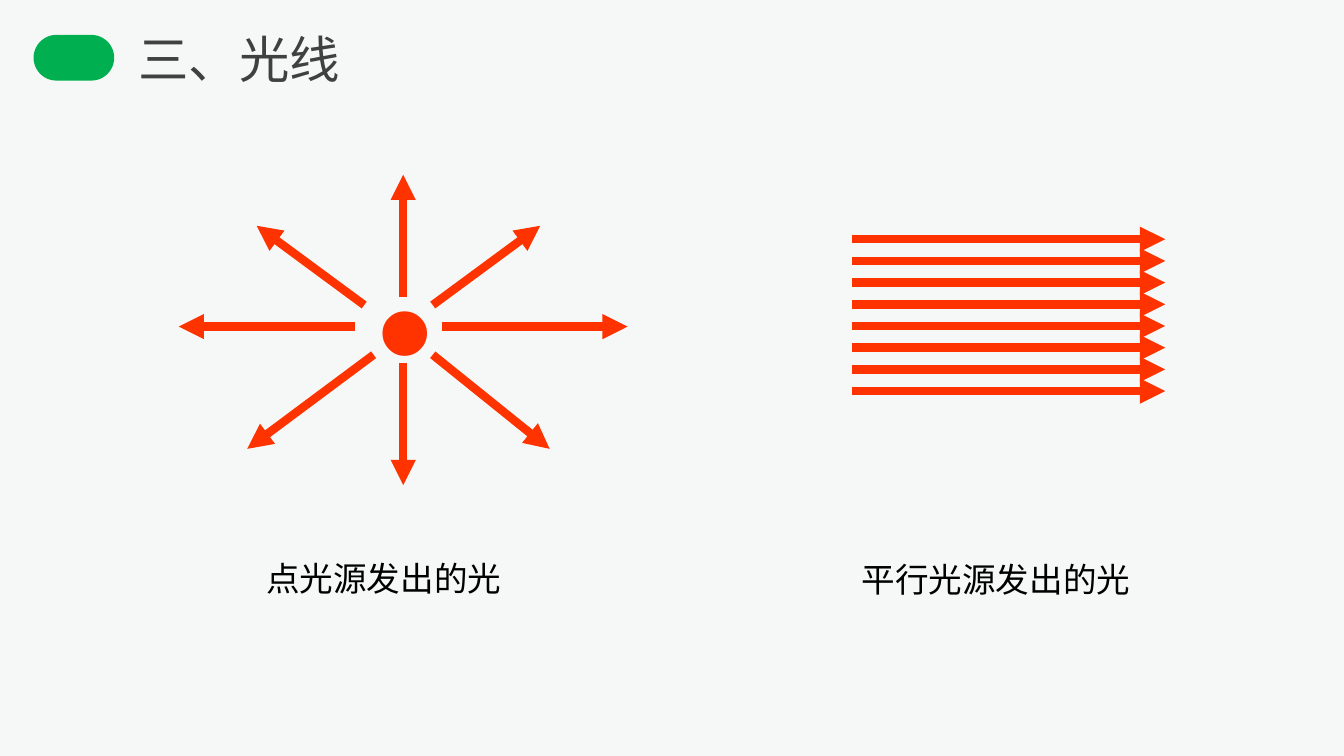
from lxml.etree import SubElement
from pptx import Presentation
from pptx.dml.color import RGBColor
from pptx.enum.shapes import MSO_CONNECTOR, MSO_SHAPE
from pptx.oxml.ns import qn
from pptx.util import Inches, Pt

RAY_COLOR = "FF3300"
POINT_RAYS = [
    ((3.29, 2.43), (4.67, 2.43)),
    ((3, 2.21), (3, 1.3)),
    ((2.64, 2.43), (1.33, 2.43)),
    ((3, 2.7), (3, 3.61)),
    ((3.22, 2.27), (4.02, 1.68)),
    ((3.22, 2.64), (4.09, 3.34)),
    ((2.71, 2.27), (1.91, 1.68)),
    ((2.78, 2.64), (1.84, 3.34)),
]
PARALLEL_COUNT = 8
PARALLEL_LEFT, PARALLEL_RIGHT = 6.34, 8.67
PARALLEL_TOP, PARALLEL_BOTTOM = 1.78, 2.91


def paint(color_format, hex_color):
    color_format.rgb = RGBColor.from_string(hex_color)


def set_background(slide, hex_color):
    fill = slide.background.fill
    fill.solid()
    paint(fill.fore_color, hex_color)


def add_title_pill(slide, left, top, width, height, hex_color):
    pill = slide.shapes.add_shape(
        MSO_SHAPE.ROUNDED_RECTANGLE,
        Inches(left), Inches(top), Inches(width), Inches(height))
    pill.adjustments[0] = 0.5
    pill.shadow.inherit = False
    pill.fill.solid()
    paint(pill.fill.fore_color, hex_color)
    pill.line.fill.background()


def add_label(slide, text, box, size, hex_color, inset=(0.07, 0.04)):
    label = slide.shapes.add_textbox(*map(Inches, box))
    frame = label.text_frame
    side, end = map(Inches, inset)
    frame_format = {
        "word_wrap": True,
        "margin_left": side, "margin_right": side,
        "margin_top": end, "margin_bottom": end,
    }
    for name, value in frame_format.items():
        setattr(frame, name, value)
    run = frame.paragraphs[0].add_run()
    run.text = text
    for name, value in {"size": Pt(size), "name": "Arial"}.items():
        setattr(run.font, name, value)
    paint(run.font.color, hex_color)


def add_ray(slide, start, end):
    ray = slide.shapes.add_connector(
        MSO_CONNECTOR.STRAIGHT, *map(Inches, (*start, *end)))
    ray.line.width = Pt(4.5)
    paint(ray.line.color, RAY_COLOR)
    SubElement(ray.line._get_or_add_ln(), qn("a:tailEnd"), type="triangle")
    SubElement(ray._element.spPr, qn("a:effectLst"))


def add_point_source(slide):
    add_label(slide, "•", (2.7, 1.62, 0.65, 1.58), 88, RAY_COLOR, (0.1, 0.05))
    for start, end in POINT_RAYS:
        add_ray(slide, start, end)


def add_parallel_source(slide):
    gap = (PARALLEL_BOTTOM - PARALLEL_TOP) / (PARALLEL_COUNT - 1)
    for index in range(PARALLEL_COUNT):
        y = PARALLEL_TOP + index * gap
        add_ray(slide, (PARALLEL_LEFT, y), (PARALLEL_RIGHT, y))


def main():
    presentation = Presentation()
    presentation.slide_width = Inches(10)
    presentation.slide_height = Inches(10 * 9 / 16)
    slide = presentation.slides.add_slide(presentation.slide_layouts[6])

    set_background(slide, "F6F8F8")
    add_title_pill(slide, 0.25, 0.26, 0.6, 0.34, "00B050")
    add_point_source(slide)
    add_parallel_source(slide)
    add_label(slide, "点光源发出的光", (1.91, 4.11, 3.7, 0.38), 18, "000000")
    add_label(slide, "平行光源发出的光", (6.34, 4.12, 3.59, 0.38), 18, "000000")
    add_label(slide, "三、光线", (0.96, 0.17, 3.71, 0.53), 27, "404040")

    presentation.save("out.pptx")


if __name__ == "__main__":
    main()
